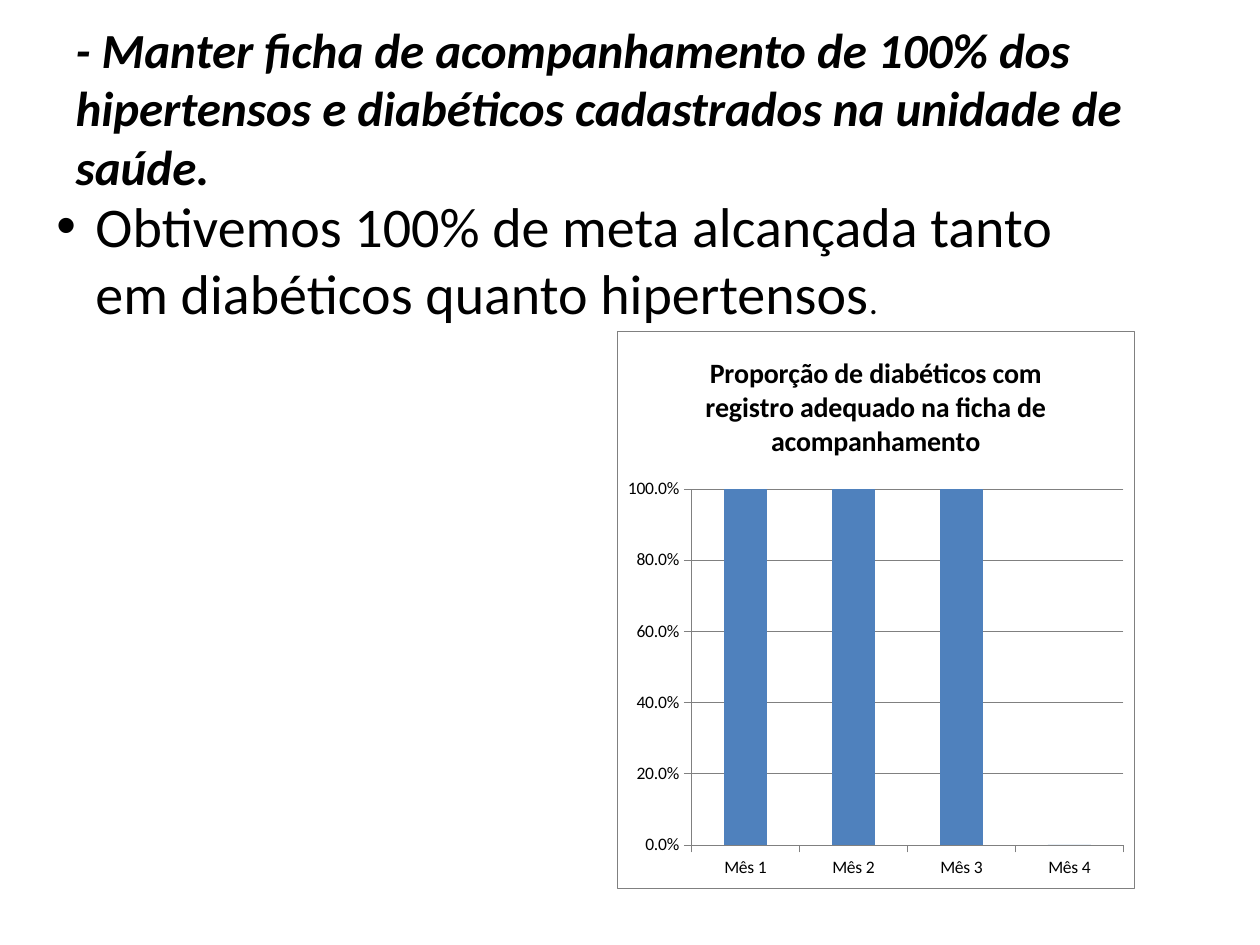
from lxml.etree import SubElement
from pptx import Presentation
from pptx.chart.data import CategoryChartData
from pptx.dml.color import RGBColor
from pptx.enum.chart import XL_CHART_TYPE, XL_TICK_MARK
from pptx.enum.text import MSO_ANCHOR, PP_ALIGN
from pptx.oxml import parse_xml
from pptx.oxml.ns import nsdecls, qn
from pptx.util import Inches, Pt

WIDTH, HEIGHT = 10, 7.5
BLACK, WHITE, GRAY, BLUE = "000000", "FFFFFF", "808080", "4F81BD"
HEADING = ("- Manter ficha de acompanhamento de 100% dos hipertensos e "
           "diabéticos cadastrados na unidade de saúde.")
RESULT = "Obtivemos 100% de meta alcançada tanto em diabéticos quanto hipertensos"
CHART_TITLE = "Proporção de diabéticos com registro adequado na ficha de acompanhamento"
MONTHS = {"Mês 1": 1, "Mês 2": 1, "Mês 3": 1, "Mês 4": 0}


def color(value):
    return RGBColor.from_string(value)


def box(left, top, width, height):
    """Turn shares of the slide's size into lengths."""
    return (Inches(left * WIDTH), Inches(top * HEIGHT),
            Inches(width * WIDTH), Inches(height * HEIGHT))


class SlideBuilder:
    """Holds the style and the current slide."""

    font_name = "Calibri"
    hairline = Pt(0.25)

    def __init__(self, presentation):
        self.slide = presentation.slides.add_slide(presentation.slide_layouts[5])

    def style_font(self, font, size, bold=False, italic=False):
        font.name, font.size = self.font_name, Pt(size)
        font.bold, font.italic = bold, italic
        font.color.rgb = color(BLACK)

    def style_line(self, line):
        line.color.rgb = color(GRAY)
        line.width = self.hairline

    def title(self, text, place):
        shape = self.slide.shapes.title
        shape.left, shape.top, shape.width, shape.height = box(*place)
        frame = shape.text_frame
        frame.text = text
        frame.word_wrap = True
        frame.vertical_anchor = MSO_ANCHOR.MIDDLE
        frame.margin_bottom = Inches(0.22)
        paragraph = frame.paragraphs[0]
        paragraph.alignment = PP_ALIGN.LEFT
        self.style_font(paragraph.font, 28, bold=True, italic=True)

    def bullet(self, text, ending, place):
        frame = self.slide.shapes.add_textbox(*box(*place)).text_frame
        frame.word_wrap = True
        paragraph = frame.paragraphs[0]
        for words, size in ((text, 32), (ending, 20)):
            run = paragraph.add_run()
            run.text = words
            self.style_font(run.font, size)
        properties = paragraph._p.get_or_add_pPr()
        indent = Inches(0.31)
        properties.set("marL", str(indent))
        properties.set("indent", str(-indent))
        SubElement(properties, qn("a:buFont"), typeface="Arial")
        SubElement(properties, qn("a:buChar"), char="•")

    def column_chart(self, title, values, place):
        data = CategoryChartData(number_format="0.0%")
        data.categories = list(values)
        data.add_series(title, list(values.values()))
        chart = self.slide.shapes.add_chart(
            XL_CHART_TYPE.COLUMN_CLUSTERED, *box(*place), data).chart
        self.style_font(chart.font, 10)
        chart.has_legend = False
        chart.has_title = True
        chart.chart_title.include_in_layout = False
        chart.chart_title.text_frame.text = title
        self.style_font(chart.chart_title.text_frame.paragraphs[0].font, 16, bold=True)
        for axis in (chart.category_axis, chart.value_axis):
            axis.major_tick_mark = XL_TICK_MARK.OUTSIDE
            axis.minor_tick_mark = XL_TICK_MARK.NONE
            self.style_font(axis.tick_labels.font, 10)
            self.style_line(axis.format.line)
        scale = chart.value_axis
        scale.minimum_scale, scale.maximum_scale, scale.major_unit = 0, 1, 0.2
        scale.tick_labels.number_format = "0.0%"
        scale.tick_labels.number_format_is_linked = False
        self.style_line(scale.major_gridlines.format.line)
        plot = chart.plots[0]
        plot.gap_width = 150
        plot.vary_by_categories = False
        fill = plot.series[0].format.fill
        fill.solid()
        fill.fore_color.rgb = color(BLUE)
        self.frame_chart(chart)

    def frame_chart(self, chart):
        frame = parse_xml(
            f'<c:spPr {nsdecls("c", "a")}>'
            f'<a:solidFill><a:srgbClr val="{WHITE}"/></a:solidFill>'
            f'<a:ln w="{self.hairline}"><a:solidFill><a:srgbClr val="{GRAY}"/>'
            '</a:solidFill></a:ln></c:spPr>')
        chart._chartSpace.find(qn("c:chart")).addnext(frame)


def main():
    presentation = Presentation()
    presentation.slide_width, presentation.slide_height = Inches(WIDTH), Inches(HEIGHT)
    builder = SlideBuilder(presentation)
    builder.title(HEADING, (0.05, 0.04, 0.9, 0.17))
    builder.column_chart(CHART_TITLE, MONTHS, (0.49, 0.35, 0.41, 0.59))
    builder.bullet(RESULT, ".", (0.035, 0.196, 0.874, 0.197))
    presentation.save("out.pptx")


if __name__ == "__main__":
    main()
